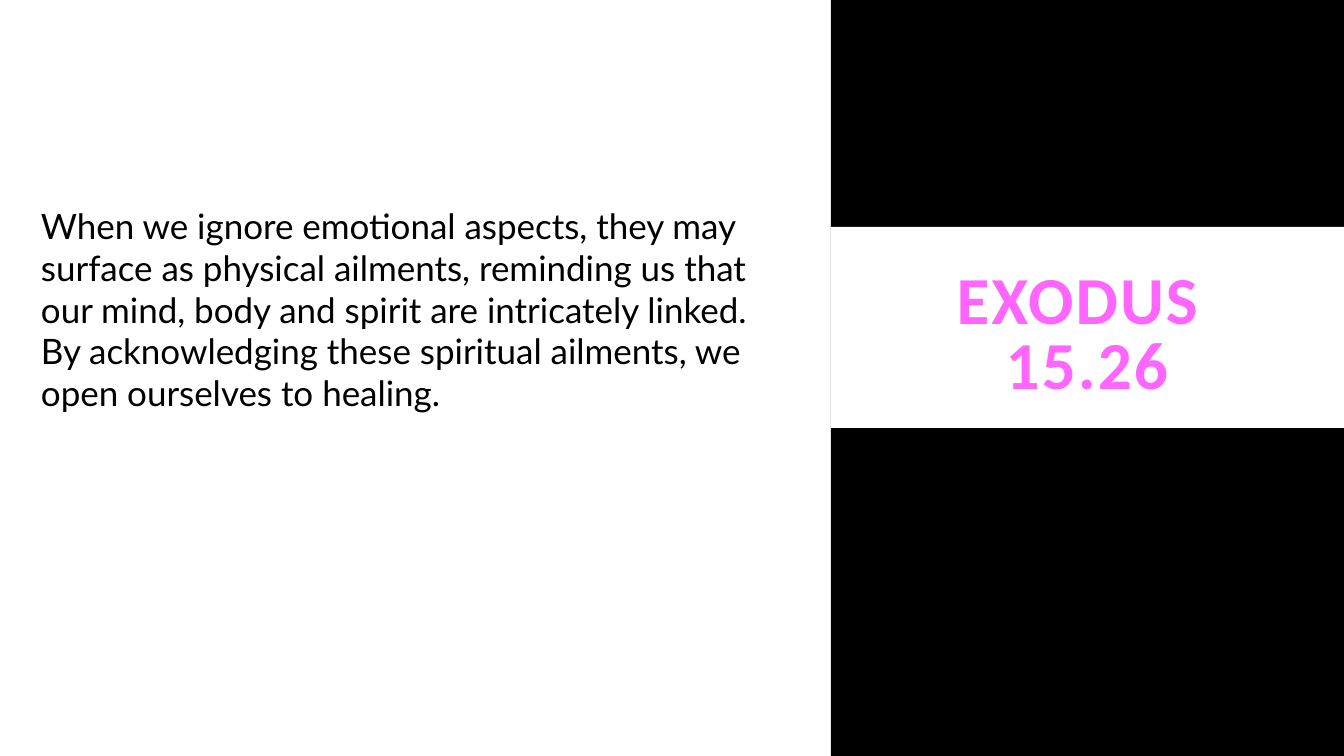
from pptx import Presentation
from pptx.dml.color import RGBColor
from pptx.enum.shapes import MSO_SHAPE
from pptx.enum.text import MSO_ANCHOR, MSO_AUTO_SIZE, PP_ALIGN
from pptx.util import Pt

RECT = MSO_SHAPE.RECTANGLE
MIDDLE = MSO_ANCHOR.MIDDLE
NO_FIT = MSO_AUTO_SIZE.NONE
LEFT, CENTER = PP_ALIGN.LEFT, PP_ALIGN.CENTER
W, H = 1344, 756
SCALE = 12192000 / W

BODY = (
    "When we ignore emotional aspects, they may surface as physical ailments, "
    "reminding us that our mind, body and spirit are intricately linked. "
    "By acknowledging these spiritual ailments, we open ourselves to healing."
)


def px(n):
    return round(n * SCALE)


def rgb(color):
    return RGBColor.from_string(color)


def add_rect(s, x, y, w, h, color):
    sp = s.shapes.add_shape(RECT, px(x), px(y), px(w), px(h))
    sp.shadow.inherit = False
    sp.fill.solid()
    sp.fill.fore_color.rgb = rgb(color)
    sp.line.fill.background()
    return sp


def write(tf, text, size, font, color, bold=False, align=LEFT, line=1.0, spacing=0):
    tf.word_wrap = True
    p = tf.paragraphs[0]
    p.text = text
    p.alignment = align
    p.line_spacing = line
    for r in p.runs:
        r.font.size = Pt(size)
        r.font.name = font
        r.font.bold = bold
        r.font.color.rgb = rgb(color)
        if spacing:
            r.font._element.set("spc", str(round(spacing * 100)))


def add_title_panel(s, x, y, w, h):
    add_rect(s, x, y, w, h, "000000")
    add_rect(s, x, y + 227, w, 201, "FFFFFF")
    title = s.shapes.title
    title.left, title.top = px(x + 35), px(y + 242)
    title.width, title.height = px(w - 71), px(191)
    s.shapes.element.append(title.element)
    tf = title.text_frame
    tf.auto_size = NO_FIT
    tf.vertical_anchor = MIDDLE
    write(tf, "EXODUS \v15.26", 48, "Calibri", "FF66FF",
          bold=True, align=CENTER, line=0.8, spacing=1.5)


def add_body_table(s, x, y, w, h):
    table = s.shapes.add_table(1, 1, px(x), px(y), px(w), px(h)).table
    table.first_row = False
    table.horz_banding = False
    cell = table.cell(0, 0)
    cell.fill.background()
    cell.vertical_anchor = MIDDLE
    cell.margin_left = cell.margin_right = px(14)
    cell.margin_top = cell.margin_bottom = px(14)
    write(cell.text_frame, BODY, 25, "Lato", "000000")


def main():
    prs = Presentation()
    prs.slide_width, prs.slide_height = px(W), px(H)
    s = prs.slides.add_slide(prs.slide_layouts[5])
    s.background.fill.solid()
    s.background.fill.fore_color.rgb = rgb("FFFFFF")
    add_title_panel(s, 831, 0, W - 831, H)
    add_body_table(s, 27, 191, 777, 196)
    prs.save("out.pptx")


if __name__ == "__main__":
    main()
